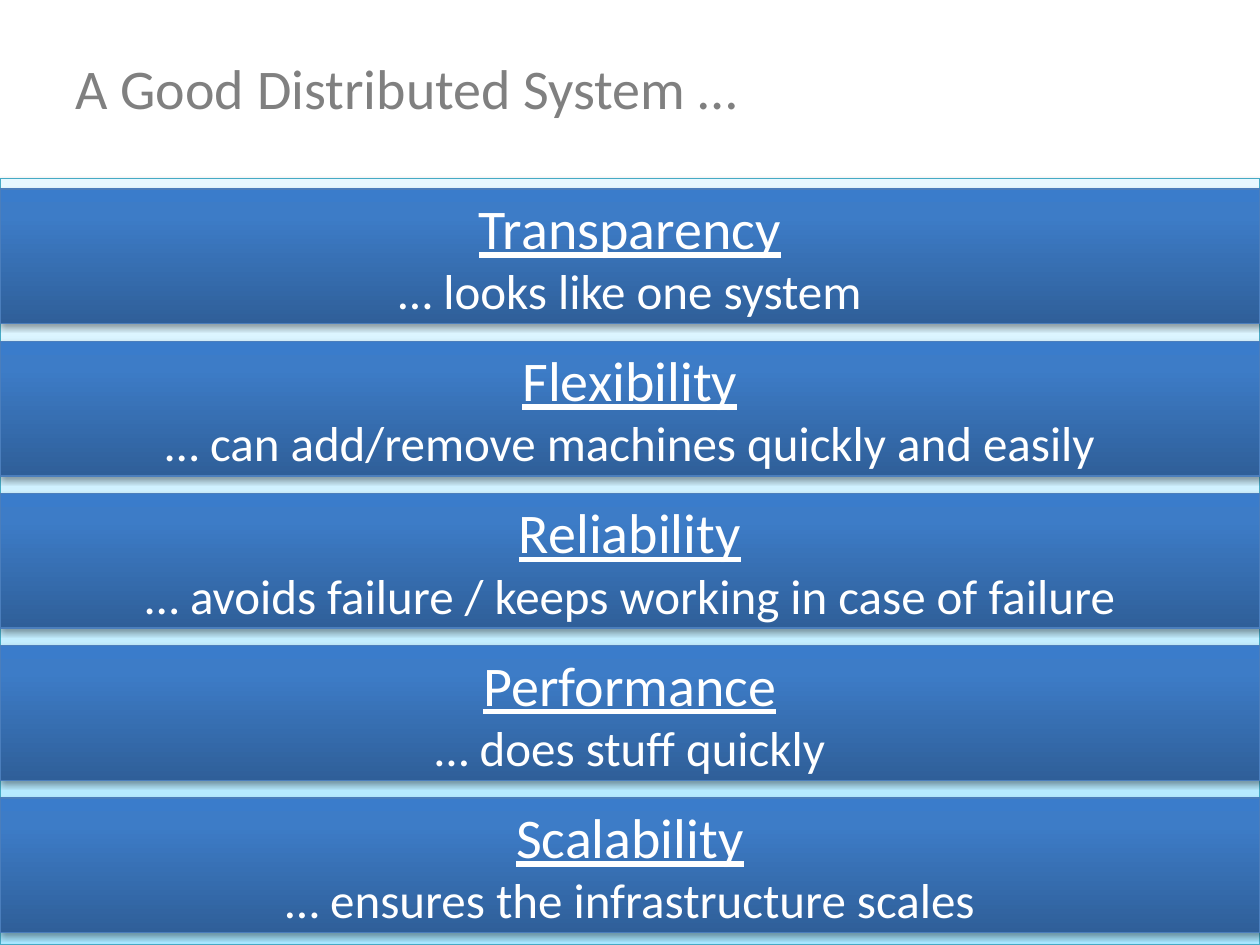
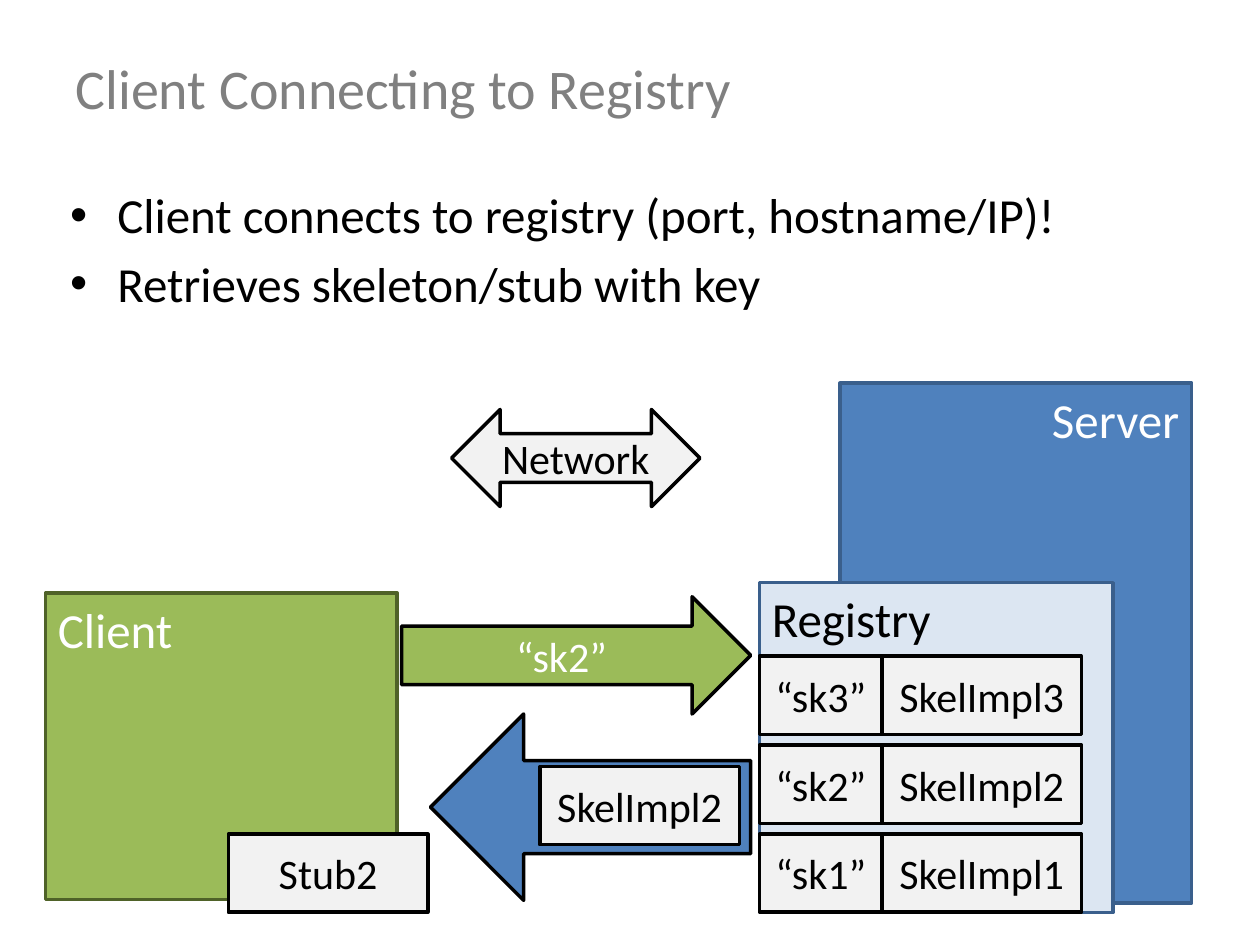
from dataclasses import dataclass

from lxml.etree import SubElement
from pptx import Presentation
from pptx.dml.color import RGBColor
from pptx.enum.shapes import MSO_SHAPE
from pptx.enum.text import MSO_ANCHOR, PP_ALIGN
from pptx.oxml import parse_xml
from pptx.oxml.ns import nsdecls, qn
from pptx.shapes.autoshape import Shape
from pptx.slide import Slide
from pptx.text.text import _Paragraph
from pptx.util import Pt

FONT = "Calibri"
COLORS = {
    "title": "808080",
    "black": "000000",
    "white": "FFFFFF",
    "blue": "4F81BD",
    "blue_line": "3A5F8C",
    "pale_blue": "DCE6F2",
    "green": "9BBB59",
    "green_line": "4F6228",
    "grey": "F2F2F2",
    "panel_line": "46AAC5",
    "panel_low": "A7E6FF",
    "panel_mid": "C1EDFF",
    "panel_high": "E7F8FF",
    "band_line": "4B7EBC",
    "band_low": "2F5F99",
    "band_mid": "3D7CC7",
    "band_high": "3A7CCB",
}


@dataclass(frozen=True)
class GlossStyle:
    stops: tuple[tuple[int, str], ...]
    line: str
    shadow_alpha: int
    shadow_distance: float


@dataclass(frozen=True)
class Box:
    left: float
    top: float
    width: float
    height: float
    text: str = ""
    fill: str = "grey"
    line: str = "black"
    color: str = "black"
    size: int = 24
    align: PP_ALIGN = PP_ALIGN.CENTER
    anchor: MSO_ANCHOR = MSO_ANCHOR.MIDDLE
    kind: MSO_SHAPE = MSO_SHAPE.RECTANGLE


PANEL = GlossStyle(
    ((0, "panel_low"), (35, "panel_mid"), (100, "panel_high")), "panel_line", 38, 1.6
)
BAND = GlossStyle(
    ((0, "band_low"), (80, "band_mid"), (100, "band_high")), "band_line", 35, 1.8
)

QUALITIES = [
    ("Transparency", "… looks like one system"),
    ("Flexibility", "… can add/remove machines quickly and easily"),
    ("Reliability", "… avoids failure / keeps working in case of failure"),
    ("Performance", "… does stuff quickly"),
    ("Scalability", "… ensures the infrastructure scales"),
]
BAND_TOP, BAND_HEIGHT, BAND_PITCH = 108, 77, 87

STEPS = [
    "Client connects to registry (port, hostname/IP)!",
    "Retrieves skeleton/stub with key",
]
REGISTRY_LEFT, KEY_WIDTH, IMPL_WIDTH = 434, 70, 114
ENTRY_TOP, ENTRY_HEIGHT, ENTRY_PITCH = 375, 44.7, 50.8


def rgb(name: str) -> RGBColor:
    return RGBColor.from_string(COLORS[name])


def style_text(p: _Paragraph, size: int, color: str) -> None:
    p.font.name = FONT
    p.font.size = Pt(size)
    p.font.color.rgb = rgb(color)


def add_titled_slide(prs: Presentation, title: str) -> Slide:
    slide = prs.slides.add_slide(prs.slide_layouts[5])
    sp = slide.shapes.title
    sp.left, sp.top, sp.width, sp.height = Pt(36), Pt(21.6), Pt(648), Pt(56)
    tf = sp.text_frame
    tf.text = title
    tf.vertical_anchor = MSO_ANCHOR.MIDDLE
    p = tf.paragraphs[0]
    p.alignment = PP_ALIGN.LEFT
    style_text(p, 32, "title")
    return slide


def add_gloss(slide: Slide, top: float, height: float, style: GlossStyle) -> Shape:
    """Add a full-width rectangle with an upward gradient and a soft shadow."""
    sp = slide.shapes.add_shape(
        MSO_SHAPE.RECTANGLE, Pt(0), Pt(top), Pt(720), Pt(height)
    )
    sp.line.color.rgb = rgb(style.line)
    sp.line.width = Pt(0.75)
    sp.fill.gradient()
    sp.fill.gradient_angle = 90
    stops = sp._element.spPr.find(qn("a:gradFill")).find(qn("a:gsLst"))
    for stop in list(stops):
        stops.remove(stop)
    for position, color in style.stops:
        stop = SubElement(stops, qn("a:gs"), pos=str(position * 1000))
        SubElement(stop, qn("a:srgbClr"), val=COLORS[color])
    sp.shadow.inherit = False
    sp._element.spPr.find(qn("a:effectLst")).append(parse_xml(
        f'<a:outerShdw {nsdecls("a")} blurRad="{Pt(3.1)}" '
        f'dist="{Pt(style.shadow_distance)}" dir="5400000" rotWithShape="0">'
        f'<a:srgbClr val="{COLORS["black"]}">'
        f'<a:alpha val="{style.shadow_alpha * 1000}"/></a:srgbClr></a:outerShdw>'
    ))
    return sp


def add_band(slide: Slide, top: float, heading: str, detail: str) -> None:
    tf = add_gloss(slide, top, BAND_HEIGHT, BAND).text_frame
    tf.vertical_anchor = MSO_ANCHOR.MIDDLE
    tf.text = f"{heading}\n{detail}"
    for p, size in zip(tf.paragraphs, (32, 28)):
        p.alignment = PP_ALIGN.CENTER
        style_text(p, size, "white")
    tf.paragraphs[0].font.underline = True


def add_box(slide: Slide, box: Box) -> None:
    sp = slide.shapes.add_shape(
        box.kind, Pt(box.left), Pt(box.top), Pt(box.width), Pt(box.height)
    )
    sp.shadow.inherit = False
    sp.fill.solid()
    sp.fill.fore_color.rgb = rgb(box.fill)
    sp.line.color.rgb = rgb(box.line)
    sp.line.width = Pt(2)
    if box.text:
        tf = sp.text_frame
        tf.text = box.text
        tf.vertical_anchor = box.anchor
        p = tf.paragraphs[0]
        p.alignment = box.align
        style_text(p, box.size, box.color)


def host(left: float, top: float, width: float, height: float, text: str, fill: str,
         line: str, color: str = "white", align: PP_ALIGN = PP_ALIGN.LEFT) -> Box:
    """Describe a large box labelled at its top edge."""
    return Box(left, top, width, height, text, fill, line, color, 28, align,
               MSO_ANCHOR.TOP)


def implementation(left: float, top: float, text: str) -> Box:
    return Box(left, top, IMPL_WIDTH, ENTRY_HEIGHT, text)


def add_bullets(slide: Slide, items: list[str]) -> None:
    tf = slide.shapes.add_textbox(Pt(33), Pt(102), Pt(648), Pt(126)).text_frame
    tf.word_wrap = True
    tf.text = "\n".join(items)
    for p in tf.paragraphs:
        style_text(p, 28, "black")
        p.space_before = Pt(5.6)
        pPr = p._p.get_or_add_pPr()
        pPr.set("marL", str(Pt(27)))
        pPr.set("indent", str(Pt(-27)))
        bullet = (("a:buFont", {"typeface": "Arial"}), ("a:buChar", {"char": "•"}))
        for i, (tag, attributes) in enumerate(bullet):
            element = parse_xml(f'<{tag} {nsdecls("a")}/>')
            for key, value in attributes.items():
                element.set(key, value)
            pPr.insert(list(pPr).index(pPr.find(qn("a:defRPr"))), element)


def build_qualities(prs: Presentation) -> None:
    slide = add_titled_slide(prs, "A Good Distributed System …")
    add_gloss(slide, 102, 438, PANEL)
    for i, (heading, detail) in enumerate(QUALITIES):
        add_band(slide, BAND_TOP + i * BAND_PITCH, heading, detail)


def build_registry(prs: Presentation) -> None:
    slide = add_titled_slide(prs, "Client Connecting to Registry")
    add_bullets(slide, STEPS)
    boxes = [
        host(480, 219, 201, 297, "Server", "blue", "blue_line", align=PP_ALIGN.RIGHT),
        host(REGISTRY_LEFT, 333, 202, 188.5, "Registry", "pale_blue", "blue_line",
             "black"),
        host(26, 339, 201, 175, "Client", "green", "green_line"),
        Box(258, 234, 142, 55.5, "Network", kind=MSO_SHAPE.LEFT_RIGHT_ARROW),
    ]
    for i, number in enumerate((3, 2, 1)):
        top = ENTRY_TOP + i * ENTRY_PITCH
        boxes += [
            Box(REGISTRY_LEFT, top, KEY_WIDTH, ENTRY_HEIGHT, f"“sk{number}”"),
            implementation(REGISTRY_LEFT + KEY_WIDTH, top, f"SkelImpl{number}"),
        ]
    boxes += [
        Box(229.5, 341, 199.5, 67, "“sk2”", "green", color="white",
            kind=MSO_SHAPE.RIGHT_ARROW),
        Box(246, 408, 183, 106.5, fill="blue", kind=MSO_SHAPE.LEFT_ARROW),
        implementation(308.5, 438, "SkelImpl2"),
        implementation(130.5, ENTRY_TOP + 2 * ENTRY_PITCH, "Stub2"),
    ]
    for box in boxes:
        add_box(slide, box)


def main() -> None:
    prs = Presentation()
    prs.slide_width, prs.slide_height = Pt(720), Pt(540)
    build_qualities(prs)
    build_registry(prs)
    prs.save("out.pptx")


if __name__ == "__main__":
    main()
